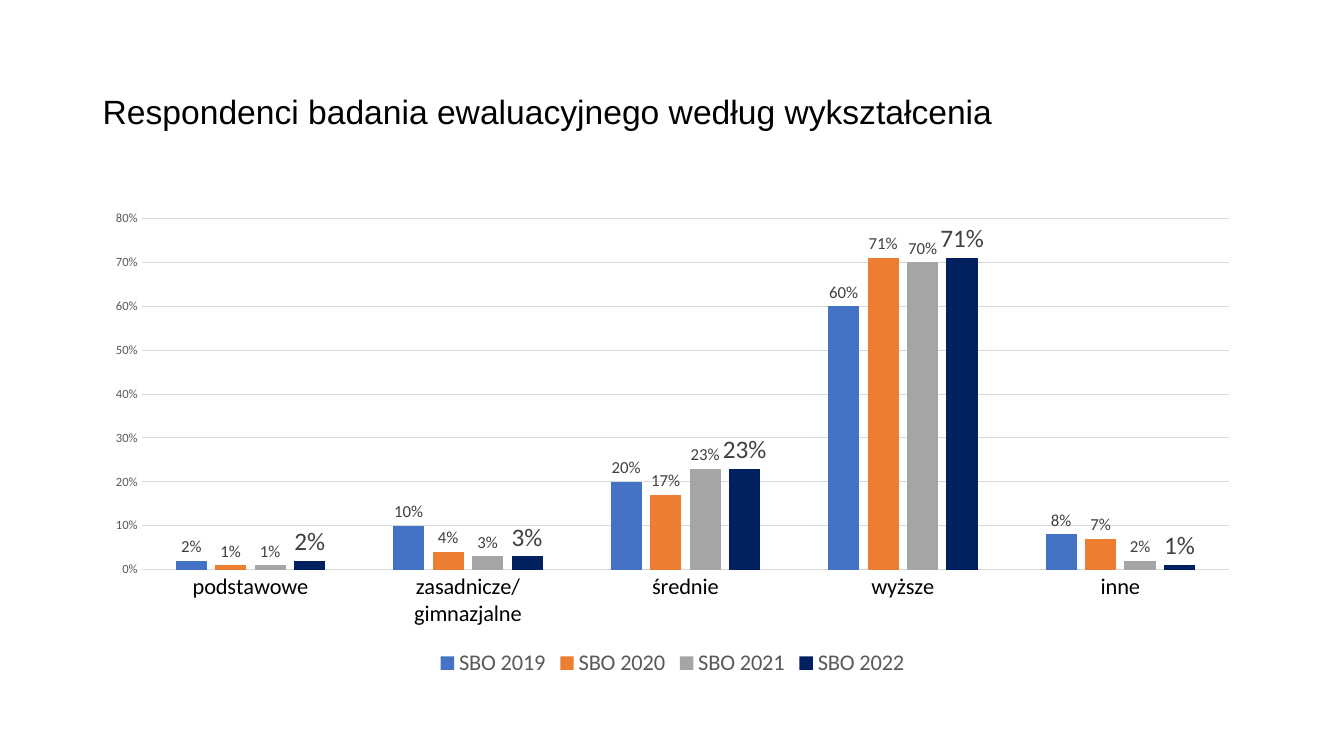
from pptx import Presentation
from pptx.chart.data import CategoryChartData
from pptx.dml.color import RGBColor as RGB
from pptx.enum.chart import XL_CHART_TYPE as Kind, XL_LABEL_POSITION as Spot
from pptx.enum.chart import XL_LEGEND_POSITION as Side, XL_TICK_MARK as Tick
from pptx.enum.text import MSO_ANCHOR as Anchor
from pptx.util import Inches, Pt

THEME = {
    "head": "Arial", "body": "Calibri",
    "black": "000000", "grey": "595959", "dark": "404040", "rule": "D9D9D9",
    "title": 24, "large": 18, "text": 16, "label": 12, "base": 10, "scale": 9,
    "line": 0.75,
}
GROUPS = ["podstawowe", "zasadnicze/gimnazjalne", "średnie", "wyższe", "inne"]
# Name, values, bar colour, label size
SERIES = [
    ("SBO 2019", [0.02, 0.10, 0.20, 0.60, 0.08], "4472C4", "label"),
    ("SBO 2020", [0.01, 0.04, 0.17, 0.71, 0.07], "ED7D31", "label"),
    ("SBO 2021", [0.01, 0.03, 0.23, 0.70, 0.02], "A5A5A5", "label"),
    ("SBO 2022", [0.02, 0.03, 0.23, 0.71, 0.01], "002060", "large"),
]


def style(font, size, color, face="body"):
    font.name = THEME[face]
    font.size = Pt(THEME[size])
    font.bold = False
    font.color.rgb = RGB.from_string(THEME[color])


def rule(line):
    line.color.rgb = RGB.from_string(THEME["rule"])
    line.width = Pt(THEME["line"])


# Slide and shared column
deck = Presentation()
deck.slide_width, deck.slide_height = Inches(13.33), Inches(7.5)
slide = deck.slides.add_slide(deck.slide_layouts[6])
left, wide = Inches(0.92), Inches(11.5)

# Title
frame = slide.shapes.add_textbox(left, Inches(0.4), wide, Inches(1.45)).text_frame
frame.word_wrap = True
frame.vertical_anchor = Anchor.MIDDLE
para = frame.paragraphs[0]
para.line_spacing = 0.9
run = para.add_run()
run.text = "Respondenci badania ewaluacyjnego według wykształcenia"
style(run.font, "title", "black", "head")

# Chart
data = CategoryChartData(number_format="0%")
data.categories = GROUPS
for name, vals, color, size in SERIES:
    data.add_series(name, vals)
chart = slide.shapes.add_chart(
    Kind.COLUMN_CLUSTERED, left, Inches(2), wide, Inches(4.76), data).chart
chart.has_title = False
style(chart.font, "base", "black")

# Bars and labels
plot = chart.plots[0]
plot.vary_by_categories = False
plot.gap_width, plot.overlap = 219, -27
for bars, (name, vals, color, size) in zip(plot.series, SERIES):
    bars.format.fill.solid()
    bars.format.fill.fore_color.rgb = RGB.from_string(color)
    bars.invert_if_negative = False
    tags = bars.data_labels
    tags.show_value = True
    tags.number_format, tags.number_format_is_linked = "0%", False
    tags.position = Spot.OUTSIDE_END
    style(tags.font, size, "dark")

# Axes
groups, scale = chart.category_axis, chart.value_axis
for axis, size, color in ((groups, "text", "black"), (scale, "scale", "grey")):
    axis.major_tick_mark = axis.minor_tick_mark = Tick.NONE
    style(axis.tick_labels.font, size, color)
rule(groups.format.line)
scale.format.line.fill.background()
scale.has_major_gridlines = True
rule(scale.major_gridlines.format.line)
scale.minimum_scale, scale.maximum_scale, scale.major_unit = 0, 0.8, 0.1
scale.tick_labels.number_format = "0%"
scale.tick_labels.number_format_is_linked = False

# Legend
chart.has_legend = True
chart.legend.position = Side.BOTTOM
chart.legend.include_in_layout = False
style(chart.legend.font, "text", "grey")

deck.save("out.pptx")
